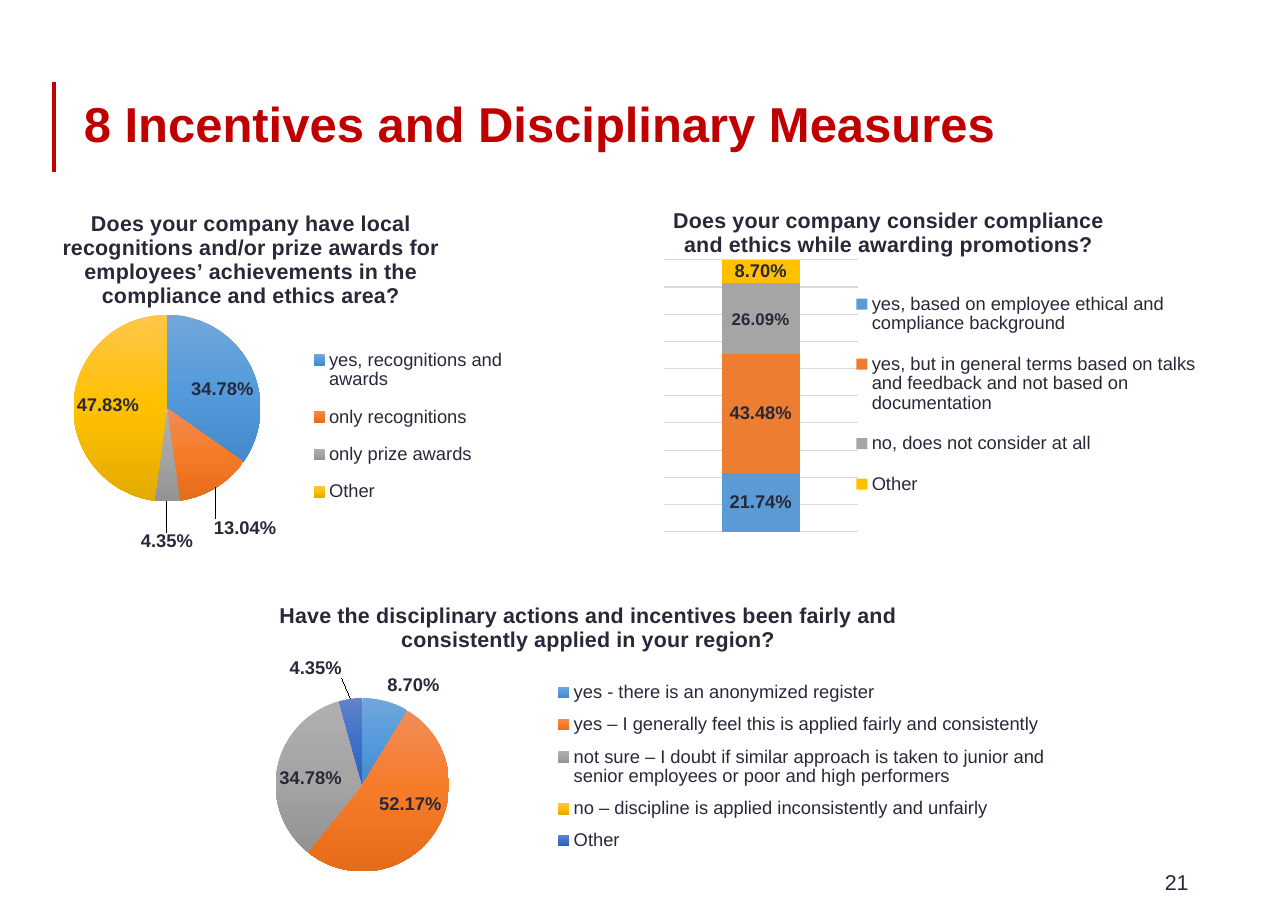
"""Build the slide on incentives and disciplinary measures with its three survey charts."""
from copy import deepcopy
from dataclasses import dataclass, field

from lxml import etree
from pptx import Presentation
from pptx.chart.chart import Chart
from pptx.chart.data import CategoryChartData
from pptx.dml.color import RGBColor
from pptx.enum.chart import XL_CHART_TYPE, XL_LABEL_POSITION, XL_LEGEND_POSITION
from pptx.enum.shapes import MSO_CONNECTOR
from pptx.enum.text import MSO_ANCHOR, PP_ALIGN
from pptx.oxml import parse_xml
from pptx.oxml.ns import nsdecls, qn
from pptx.slide import Slide
from pptx.util import Cm, Pt

PIE = XL_CHART_TYPE.PIE
STACKED = XL_CHART_TYPE.COLUMN_STACKED_100
BEST_FIT = XL_LABEL_POSITION.BEST_FIT
OUTSIDE = XL_LABEL_POSITION.OUTSIDE_END
CENTER = XL_LABEL_POSITION.CENTER
LEGEND_BOTTOM = XL_LEGEND_POSITION.BOTTOM
STRAIGHT = MSO_CONNECTOR.STRAIGHT
MIDDLE = MSO_ANCHOR.MIDDLE
LEFT, RIGHT = PP_ALIGN.LEFT, PP_ALIGN.RIGHT
PERCENT = "0.00%"


@dataclass(frozen=True)
class Theme:
    """Colours, fonts and type sizes of the slide."""
    accent: str = "C00000"
    text: str = "292839"
    base: str = "000000"
    grid: str = "D9D9D9"
    font: str = "Arial"
    base_font: str = "Calibri"
    heading: int = 32
    question: int = 14
    label: int = 12
    small_label: int = 11
    base_size: int = 10
    bars: tuple = ("5B9BD5", "ED7D31", "A5A5A5", "FFC000")
    slices: tuple = (
        ("71A6DB", "559BDB", "448ACA"),
        ("F18C57", "F67B28", "E56C19"),
        ("AFAFAF", "A5A5A5", "939393"),
        ("FFC64B", "FFC000", "E3AB00"),
        ("6183CB", "3E70CA", "3062BB"),
    )


THEME = Theme()


@dataclass(frozen=True)
class Survey:
    """One survey question; layouts are fractions of the chart, box is in centimetres."""
    question: str
    box: tuple
    answers: dict
    plot: tuple
    legend: tuple
    outside: dict = field(default_factory=dict)


RECOGNITION = Survey(
    "Does your company have local recognitions and/or prize awards for "
    "employees’ achievements in the compliance and ethics area?",
    (1.24, 4.57, 11.35, 8.13),
    {"yes, recognitions and awards": 0.3478, "only recognitions": 0.1304,
     "only prize awards": 0.0435, "Other": 0.4783},
    (0.04, 0.33, 0.38, 0.53), (0.52, 0.38, 0.4, 0.53),
    {1: (-0.01, 0.07), 2: (0, 0.07)})
FAIRNESS = Survey(
    "Have the disciplinary actions and incentives been fairly and "
    "consistently applied in your region?",
    (6.17, 13.64, 18.21, 6.45),
    {"yes - there is an anonymized register": 0.087,
     "yes – I generally feel this is applied fairly and consistently": 0.5217,
     "not sure – I doubt if similar approach is taken to junior and senior "
     "employees or poor and high performers": 0.3478,
     "no – discipline is applied inconsistently and unfairly": 0,
     "Other": 0.0435},
    (0, 0.38, 0.24, 0.62), (0.37, 0.28, 0.62, 0.69),
    {0: None, 4: (-0.01, -0.05)})
PROMOTION = Survey(
    "Does your company consider compliance and ethics while awarding promotions?",
    (15.29, 4.52, 13.18, 7.75),
    {"yes, based on employee ethical and compliance background": 0.2174,
     "yes, but in general terms based on talks and feedback and not based on "
     "documentation": 0.4348,
     "no, does not consider at all": 0.2609, "Other": 0.087},
    (0, 0.19, 0.34, 0.81), (0.33, 0.23, 0.61, 0.72))


def style(font, size: int, color: str = THEME.text, bold: bool = False,
          name: str = THEME.font) -> None:
    """Format a font."""
    font.name, font.size, font.bold = name, Pt(size), bold
    font.color.rgb = RGBColor.from_string(color)


def place(part, index: int, **values) -> None:
    """Give a chart part a manual layout as its child number index."""
    for old in part.findall(qn("c:layout")):
        part.remove(old)
    settings = "".join(f'<c:{key} val="{value}"/>' for key, value in values.items())
    part.insert(index, parse_xml(
        f'<c:layout {nsdecls("c")}><c:manualLayout>{settings}</c:manualLayout></c:layout>'))


def add_survey(slide: Slide, survey: Survey, kind: XL_CHART_TYPE) -> Chart:
    """Add a survey chart with its question, legend and plot area in place."""
    data = CategoryChartData(number_format=PERCENT)
    if kind == PIE:
        data.categories = list(survey.answers)
        data.add_series(survey.question, list(survey.answers.values()))
    else:
        data.categories = ["1"]
        for answer, share in survey.answers.items():
            data.add_series(answer, [share])
    chart = slide.shapes.add_chart(kind, *map(Cm, survey.box), data).chart
    style(chart.font, THEME.base_size, THEME.base, name=THEME.base_font)
    chart.plots[0].vary_by_categories = kind == PIE

    chart.has_title = True
    question = chart.chart_title.text_frame
    question.text = survey.question
    style(question.paragraphs[0].runs[0].font, THEME.question, bold=True)
    chart.has_legend = True
    chart.legend.position = LEGEND_BOTTOM
    chart.legend.include_in_layout = False
    style(chart.legend.font, THEME.label)

    edge = {"xMode": "edge", "yMode": "edge"}
    root = chart.element
    place(root.xpath(".//c:chart/c:title")[0], 1, **edge, x=0.01, y=0.02)
    place(root.xpath(".//c:legend")[0], 1, **edge, **dict(zip("xywh", survey.legend)))
    place(root.xpath(".//c:plotArea")[0], 0, layoutTarget="inner", **edge,
          **dict(zip("xywh", survey.plot)))
    return chart


def label_values(series, position: XL_LABEL_POSITION, size: int) -> None:
    """Show the values of a series as percentages."""
    labels = series.data_labels
    labels.show_value = True
    labels.number_format, labels.number_format_is_linked = PERCENT, False
    labels.position = position
    style(labels.font, size, bold=True)


def add_pie(slide: Slide, survey: Survey) -> None:
    """Add a pie with shaded slices, outside labels and no label on empty slices."""
    chart = add_survey(slide, survey, PIE)
    series = chart.plots[0].series[0]
    label_values(series, BEST_FIT, THEME.label)
    for index, share in enumerate(survey.answers.values()):
        point = series.points[index]
        fill = point.format.fill
        fill.gradient()
        fill.gradient_angle = 270
        stops = chart.element.xpath(f".//c:dPt[c:idx/@val='{index}']//a:gsLst")[0]
        stops.insert(1, deepcopy(stops[0]))
        for step, (stop, color) in enumerate(zip(fill.gradient_stops, THEME.slices[index])):
            stop.position = step / 2
            stop.color.rgb = RGBColor.from_string(color)
        if share and index not in survey.outside:
            continue
        point.data_label.position = OUTSIDE
        style(point.data_label.font, THEME.label, bold=True)
        label = chart.element.xpath(f".//c:dLbl[c:idx/@val='{index}']")[0]
        if not share:
            for setting in label[1:]:
                label.remove(setting)
            etree.SubElement(label, qn("c:delete")).set("val", "1")
        elif survey.outside[index]:
            place(label, 1, **dict(zip("xy", survey.outside[index])))


def add_stack(slide: Slide, survey: Survey) -> None:
    """Add a single stacked column over light gridlines."""
    chart = add_survey(slide, survey, STACKED)
    plot = chart.plots[0]
    plot.gap_width, plot.overlap = 150, 100
    sizes = (THEME.label, THEME.label, THEME.small_label, THEME.label)
    for series, color, size in zip(plot.series, THEME.bars, sizes):
        series.format.fill.solid()
        series.format.fill.fore_color.rgb = RGBColor.from_string(color)
        label_values(series, CENTER, size)
    chart.category_axis.visible = False
    shares = chart.value_axis
    shares.visible = False
    shares.minimum_scale, shares.maximum_scale, shares.major_unit = 0, 1, 0.1
    shares.has_major_gridlines = True
    grid = shares.major_gridlines.format.line
    grid.width = Pt(0.75)
    grid.color.rgb = RGBColor.from_string(THEME.grid)


def add_heading(slide: Slide, text: str) -> None:
    """Place and format the title placeholder."""
    title = slide.shapes.title
    title.left, title.top, title.width, title.height = map(Cm, (1.68, 1.9, 22.45, 2.03))
    frame = title.text_frame
    frame.text = text
    frame.word_wrap, frame.vertical_anchor = True, MIDDLE
    line = frame.paragraphs[0]
    line.alignment, line.line_spacing = LEFT, 0.9
    style(line.runs[0].font, THEME.heading, THEME.accent, bold=True)


def add_page_number(slide: Slide, number: str) -> None:
    """Add the page number at the lower right."""
    frame = slide.shapes.add_textbox(*map(Cm, (26.52, 19.76, 1.14, 1.12))).text_frame
    frame.text = number
    frame.word_wrap, frame.vertical_anchor = True, MIDDLE
    frame.paragraphs[0].alignment = RIGHT
    style(frame.paragraphs[0].runs[0].font, THEME.question)


def add_accent_rule(slide: Slide) -> None:
    """Add the upright rule beside the title."""
    rule = slide.shapes.add_connector(STRAIGHT, *map(Cm, (1.24, 1.9, 1.24, 3.96)))
    rule.line.width = Pt(2.75)
    rule.line.color.rgb = RGBColor.from_string(THEME.accent)
    etree.SubElement(rule.element.spPr, qn("a:effectLst"))


def main() -> None:
    """Build and save the slide."""
    deck = Presentation()
    deck.slide_width, deck.slide_height = Cm(29.7), Cm(21)
    slide = deck.slides.add_slide(deck.slide_layouts[5])
    add_heading(slide, "8 Incentives and Disciplinary Measures")
    add_page_number(slide, "21")
    add_pie(slide, RECOGNITION)
    add_pie(slide, FAIRNESS)
    add_stack(slide, PROMOTION)
    add_accent_rule(slide)
    deck.save("out.pptx")


if __name__ == "__main__":
    main()
